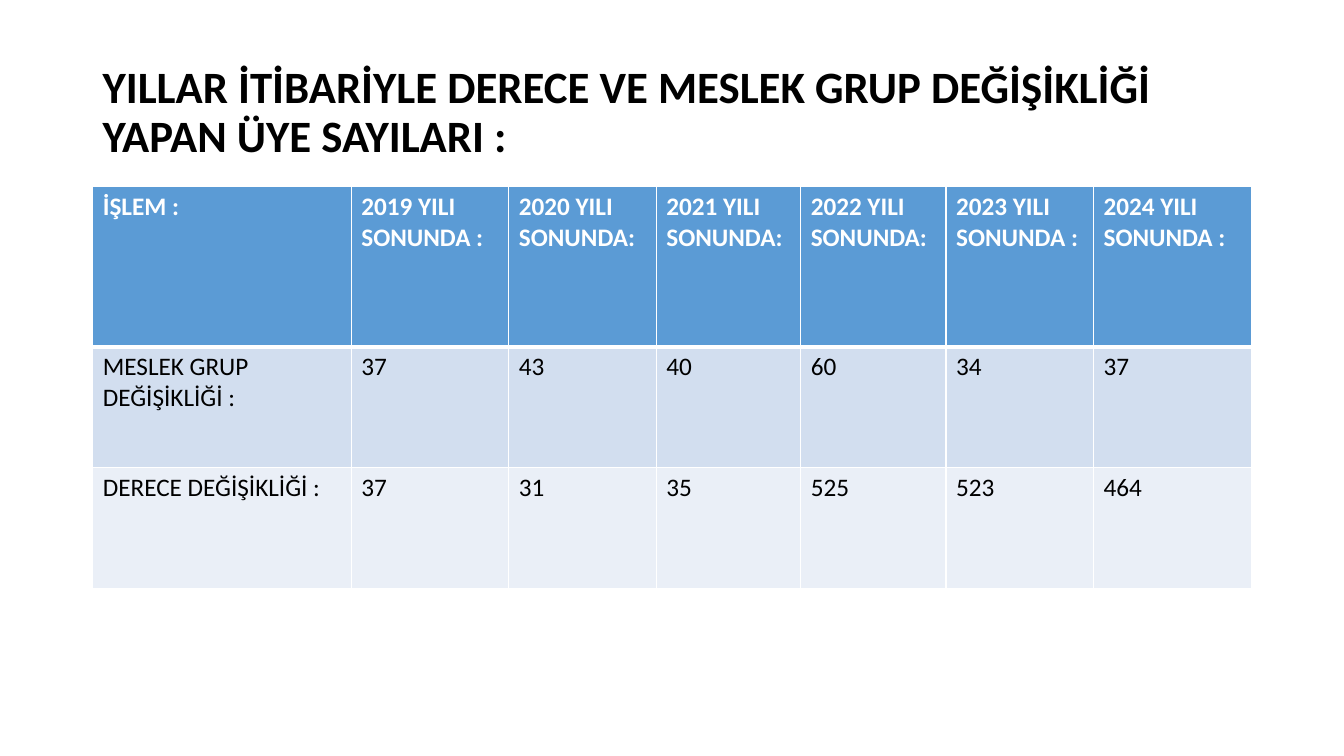
from dataclasses import dataclass

from lxml import etree
from pptx import Presentation, util as u
from pptx.dml.color import RGBColor
from pptx.enum import text as t
from pptx.oxml import ns

SLIDE_WIDTH = u.Inches(13.33)
SLIDE_HEIGHT = u.Inches(7.5)
LEFT_SHARE = 0.92 / 13.33
WIDTH_SHARE = 11.5 / 13.33
TITLE_TOP_SHARE = 0.4 / 7.5
TITLE_HEIGHT_SHARE = 1.45 / 7.5
TABLE_TOP_SHARE = 1.85 / 7.5
COLUMN_WEIGHTS = (2.56, 1.56, 1.46, 1.43, 1.44, 1.46, 1.57)


@dataclass(frozen=True)
class Theme:
    font: str = "Calibri"
    title_size: int = 32
    table_size: int = 18
    dark: str = "000000"
    light: str = "FFFFFF"
    header: str = "5B9BD5"
    band_dark: str = "D2DEEF"
    band_light: str = "EAEFF7"
    thin_line: int = 1
    thick_line: int = 3


THEME = Theme()


@dataclass(frozen=True)
class TableRow:
    values: tuple[str, ...]
    height_share: float
    fill: str
    color: str = THEME.dark
    bold: bool = False
    top_line: int = THEME.thin_line
    bottom_line: int = THEME.thin_line


ROWS = (
    TableRow(
        ("İŞLEM :", "2019 YILI SONUNDA :", "2020 YILI SONUNDA:", "2021 YILI SONUNDA:",
         "2022 YILI SONUNDA:", "2023 YILI SONUNDA :", "2024 YILI SONUNDA :"),
        1.59 / 7.5, THEME.header, color=THEME.light, bold=True,
        bottom_line=THEME.thick_line,
    ),
    TableRow(
        ("MESLEK GRUP DEĞİŞİKLİĞİ :", "37", "43", "40", "60", "34", "37"),
        1.2 / 7.5, THEME.band_dark, top_line=THEME.thick_line,
    ),
    TableRow(
        ("DERECE DEĞİŞİKLİĞİ :", "37", "31", "35", "525", "523", "464"),
        1.2 / 7.5, THEME.band_light,
    ),
)


def across(share: float) -> int:
    return round(SLIDE_WIDTH * share)


def down(share: float) -> int:
    return round(SLIDE_HEIGHT * share)


def write_text(frame, content: str, *, size: int, color: str, bold: bool,
               line_spacing: float = 1.0) -> None:
    paragraph = frame.paragraphs[0]
    paragraph.line_spacing = line_spacing
    run = paragraph.add_run()
    run.text = content
    run.font.name = THEME.font
    run.font.size = u.Pt(size)
    run.font.bold = bold
    run.font.color.rgb = RGBColor.from_string(color)


def add_border(cell, side: str, width: int) -> None:
    properties = cell._tc.get_or_add_tcPr()
    line = etree.SubElement(properties, ns.qn(f"a:ln{side}"), w=str(u.Pt(width)))
    fill = etree.SubElement(line, ns.qn("a:solidFill"))
    etree.SubElement(fill, ns.qn("a:srgbClr"), val=THEME.light)


def draw_cell(cell, content: str, row: TableRow) -> None:
    borders = {"L": THEME.thin_line, "R": THEME.thin_line,
               "T": row.top_line, "B": row.bottom_line}
    for side, width in borders.items():
        add_border(cell, side, width)
    cell.fill.solid()
    cell.fill.fore_color.rgb = RGBColor.from_string(row.fill)
    write_text(cell.text_frame, content, size=THEME.table_size,
               color=row.color, bold=row.bold)


def draw_title(slide) -> None:
    title = slide.shapes.add_textbox(
        across(LEFT_SHARE), down(TITLE_TOP_SHARE),
        across(WIDTH_SHARE), down(TITLE_HEIGHT_SHARE))
    frame = title.text_frame
    frame.word_wrap = True
    frame.vertical_anchor = t.MSO_ANCHOR.MIDDLE
    write_text(
        frame,
        "YILLAR İTİBARİYLE DERECE VE MESLEK GRUP DEĞİŞİKLİĞİ YAPAN ÜYE SAYILARI :",
        size=THEME.title_size, color=THEME.dark, bold=True, line_spacing=0.9)


def draw_table(slide, rows: tuple[TableRow, ...]) -> None:
    table = slide.shapes.add_table(
        len(rows), len(COLUMN_WEIGHTS),
        across(LEFT_SHARE), down(TABLE_TOP_SHARE), across(WIDTH_SHARE),
        down(sum(row.height_share for row in rows))).table
    for column, weight in zip(table.columns, COLUMN_WEIGHTS):
        column.width = across(WIDTH_SHARE * weight / sum(COLUMN_WEIGHTS))
    for table_row, row in zip(table.rows, rows):
        table_row.height = down(row.height_share)
        for cell, content in zip(table_row.cells, row.values):
            draw_cell(cell, content, row)


def main() -> None:
    presentation = Presentation()
    presentation.slide_width = SLIDE_WIDTH
    presentation.slide_height = SLIDE_HEIGHT
    slide = presentation.slides.add_slide(presentation.slide_layouts[6])
    draw_title(slide)
    draw_table(slide, ROWS)
    presentation.save("out.pptx")


if __name__ == "__main__":
    main()
